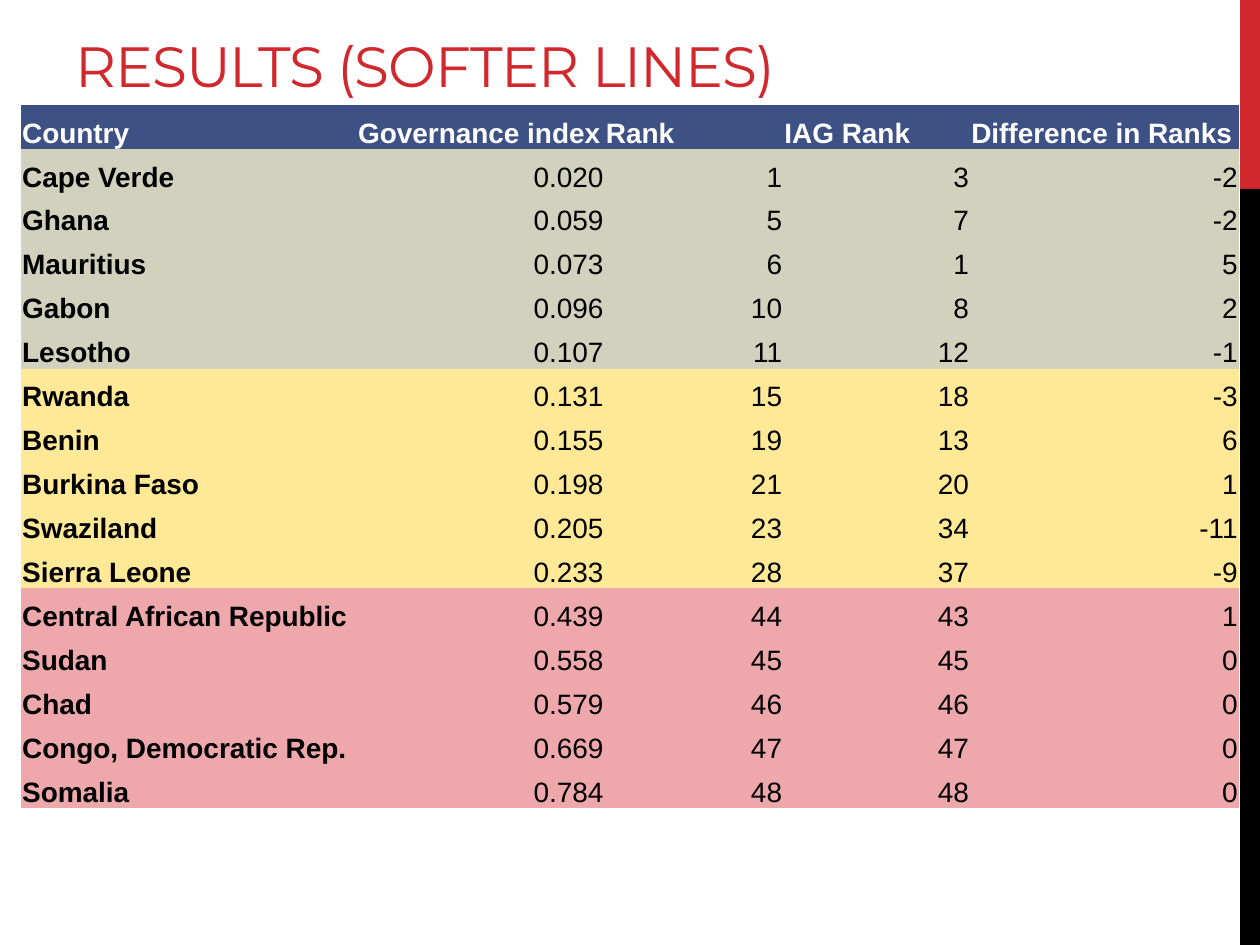
from pptx import Presentation
from pptx.dml.color import RGBColor
from pptx.enum.shapes import MSO_SHAPE
from pptx.enum.text import MSO_ANCHOR, PP_ALIGN
from pptx.oxml.ns import qn
from pptx.util import Inches, Pt

RED, BLACK, WHITE, NAVY = "D1282E", "000000", "FFFFFF", "3D5185"
NO_STYLE = "{2D5ABB26-0587-4C30-8999-92F81FD0307C}"
HEADER = ["Country", "Governance index", "Rank", "IAG Rank", "Difference in Ranks"]
GROUPS = {
    "D2D1BE": [
        ("Cape Verde", "0.020", 1, 3, -2),
        ("Ghana", "0.059", 5, 7, -2),
        ("Mauritius", "0.073", 6, 1, 5),
        ("Gabon", "0.096", 10, 8, 2),
        ("Lesotho", "0.107", 11, 12, -1),
    ],
    "FFE996": [
        ("Rwanda", "0.131", 15, 18, -3),
        ("Benin", "0.155", 19, 13, 6),
        ("Burkina Faso", "0.198", 21, 20, 1),
        ("Swaziland", "0.205", 23, 34, -11),
        ("Sierra Leone", "0.233", 28, 37, -9),
    ],
    "EEA7AA": [
        ("Central African Republic", "0.439", 44, 43, 1),
        ("Sudan", "0.558", 45, 45, 0),
        ("Chad", "0.579", 46, 46, 0),
        ("Congo, Democratic Rep.", "0.669", 47, 47, 0),
        ("Somalia", "0.784", 48, 48, 0),
    ],
}


def rgb(value):
    return RGBColor.from_string(value)


class Deck:
    """Slide builder on a grid of 60 columns by 45 rows."""

    def __init__(self):
        self.prs = Presentation()
        self.prs.slide_width, self.prs.slide_height = Inches(10), Inches(7.5)
        self.unit = self.prs.slide_width / 60
        self.title_font, self.body_font = "Montserrat", "Arial"
        self.s = self.prs.slides.add_slide(self.prs.slide_layouts[6])

    def grid(self, *values):
        return [round(v * self.unit) for v in values]

    def style(self, p, font, size, color, bold=False):
        for r in p.runs:
            r.font.name, r.font.size, r.font.bold = font, Pt(size), bold
            r.font.color.rgb = rgb(color)

    def bar(self, x, y, w, h, color):
        sp = self.s.shapes.add_shape(MSO_SHAPE.RECTANGLE, *self.grid(x, y, w, h))
        sp.shadow.inherit = False
        sp.fill.solid()
        sp.fill.fore_color.rgb = rgb(color)
        sp.line.fill.background()

    def title(self, x, y, w, h, text):
        tf = self.s.shapes.add_textbox(*self.grid(x, y, w, h)).text_frame
        tf.word_wrap = True
        tf.vertical_anchor = MSO_ANCHOR.BOTTOM
        tf.text = text
        p = tf.paragraphs[0]
        self.style(p, self.title_font, 32.4, RED)
        p.runs[0].font._element.set("spc", "-60")

    def cell(self, cell, value, fill, color, bold, align):
        cell.fill.solid()
        cell.fill.fore_color.rgb = rgb(fill)
        cell.margin_left = cell.margin_right = cell.margin_top = Inches(0.01)
        cell.margin_bottom = 0
        cell.vertical_anchor = MSO_ANCHOR.BOTTOM
        p = cell.text_frame.paragraphs[0]
        p.text = str(value)
        p.alignment = align
        self.style(p, self.body_font, 16, color, bold)

    def table(self, x, y, widths, height, header, groups):
        rows = [(NAVY, header)] + [(c, row) for c, g in groups.items() for row in g]
        box = self.grid(x, y, sum(widths), height)
        gf = self.s.shapes.add_table(len(rows), len(widths), *box)
        next(gf._element.iter(qn("a:tableStyleId"))).text = NO_STYLE
        for col, width in zip(gf.table.columns, self.grid(*widths)):
            col.width = width
        for i, (fill, values) in enumerate(rows):
            for j, value in enumerate(values):
                label = i == 0 or j == 0
                self.cell(gf.table.cell(i, j), value, fill,
                          BLACK if i else WHITE, label,
                          PP_ALIGN.LEFT if label else PP_ALIGN.RIGHT)


def main():
    deck = Deck()
    deck.bar(59.05, 0, 0.95, 9, RED)
    deck.bar(59.05, 9, 0.95, 36, BLACK)
    deck.title(3, 1, 40.5, 4, "RESULTS (SOFTER LINES)")
    deck.table(1, 5, [16, 11.8, 8.5, 8.9, 12.8], 33.5, HEADER, GROUPS)
    deck.prs.save("out.pptx")


if __name__ == "__main__":
    main()
